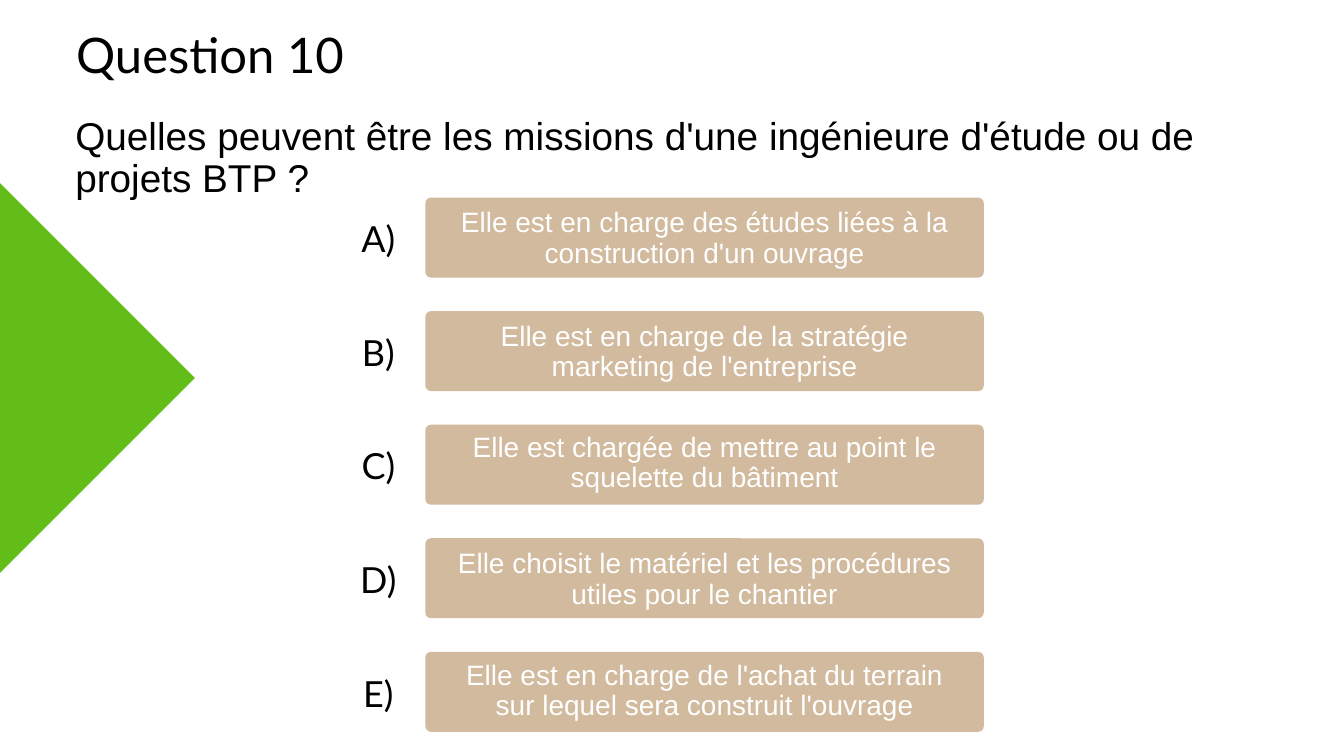
from pptx import Presentation
from pptx import util as u
from pptx.dml.color import RGBColor
from pptx.enum import shapes, text
from pptx.oxml.xmlchemy import OxmlElement

BLACK = RGBColor(0x00, 0x00, 0x00)
WHITE = RGBColor(0xFF, 0xFF, 0xFF)
GREEN = RGBColor(0x62, 0xBD, 0x19)
SAND = RGBColor(0xD1, 0xBA, 0x9D)

ANSWERS = [
    # letter, wording, space above the wording
    ("A)", "Elle est en charge des études liées à la construction d'un ouvrage", 0.13),
    ("B)", "Elle est en charge de la stratégie marketing de l'entreprise", 0.13),
    ("C)", "Elle est chargée de mettre au point le squelette du bâtiment", 0.09),
    ("D)", "Elle choisit le matériel et les procédures utiles pour le chantier", 0.13),
    ("E)", "Elle est en charge de l'achat du terrain sur lequel sera construit l'ouvrage", 0.1),
]
CARD_LEFT, CARD_WIDTH, CARD_HEIGHT = 6.33, 8.31, 1.19
FIRST_TOP, ROW_STEP = 2.94, 1.69


class QuizSlide:
    """Holds the quiz style and the slide being filled."""

    heading_font, body_font = "Lato", "Arial"

    def __init__(self, prs):
        self.s = prs.slides.add_slide(prs.slide_layouts[1])

    def set_text(self, sp, words, font, size, spacing, color=BLACK,
                 align=text.PP_ALIGN.CENTER, side=0, top=0, wrap=True):
        tf = sp.text_frame
        tf.auto_size = text.MSO_AUTO_SIZE.NONE
        tf.word_wrap = wrap
        tf.vertical_anchor = text.MSO_ANCHOR.TOP
        tf.margin_left = tf.margin_right = u.Inches(side)
        tf.margin_top, tf.margin_bottom = u.Inches(top), 0
        p = tf.paragraphs[0]
        p.text = words
        p.alignment = align
        p.line_spacing = u.Pt(spacing)
        p.space_before = u.Pt(0)
        p.font.name, p.font.size = font, u.Pt(size)
        p.font.color.rgb = color
        return p

    def place(self, sp, *box):
        sp.left, sp.top, sp.width, sp.height = map(u.Inches, box)

    def title(self, words):
        sp = self.s.shapes.title
        self.place(sp, 1.12, 0.22, 4.01, 1.09)
        self.set_text(sp, words, self.heading_font, 52.5, 73.5, wrap=False)

    def question(self, words):
        sp = self.s.placeholders[1]
        self.place(sp, 1.12, 1.73, 18.28, 1.36)
        p = self.set_text(sp, words, self.body_font, 41.5, 45.2,
                          align=text.PP_ALIGN.LEFT)
        # Plain paragraph: no bullet, no hanging indent
        pPr = p._p.get_or_add_pPr()
        pPr.set("marL", "0")
        pPr.set("indent", "0")
        pPr.insert_element_before(OxmlElement("a:buNone"),
                                  "a:tabLst", "a:defRPr", "a:extLst")

    def shape(self, kind, color, *box):
        sp = self.s.shapes.add_shape(kind, *map(u.Inches, box))
        sp.shadow.inherit = False
        sp.fill.solid()
        sp.fill.fore_color.rgb = color
        sp.line.fill.background()
        return sp

    def letter(self, words, top):
        sp = self.s.shapes.add_textbox(*map(u.Inches, (5.35, top, 0.56, 0.8)))
        self.set_text(sp, words, self.heading_font, 38.5, 53.9, wrap=False)

    def card(self, words, top, text_top):
        sp = self.shape(shapes.MSO_SHAPE.ROUNDED_RECTANGLE, SAND,
                        CARD_LEFT, top, CARD_WIDTH, CARD_HEIGHT)
        sp.adjustments[0] = 0.07
        self.set_text(sp, words, self.body_font, 30, 32.7, WHITE,
                      side=0.46, top=text_top)


def main():
    prs = Presentation()
    prs.slide_width, prs.slide_height = u.Inches(20), u.Inches(11.25)
    quiz = QuizSlide(prs)

    # Heading and question
    quiz.title("Question 10")
    quiz.question("Quelles peuvent être les missions d'une ingénieure "
                  "d'étude ou de projets BTP ?")

    # Green diamond bleeding off the left edge
    quiz.shape(shapes.MSO_SHAPE.DIAMOND, GREEN, -2.93, 2.71, 5.83, 5.83)

    # Answer rows
    for i, (letter, words, text_top) in enumerate(ANSWERS):
        top = FIRST_TOP + i * ROW_STEP
        quiz.letter(letter, top + 0.18)
        quiz.card(words, top, text_top)

    prs.save("out.pptx")


if __name__ == "__main__":
    main()
